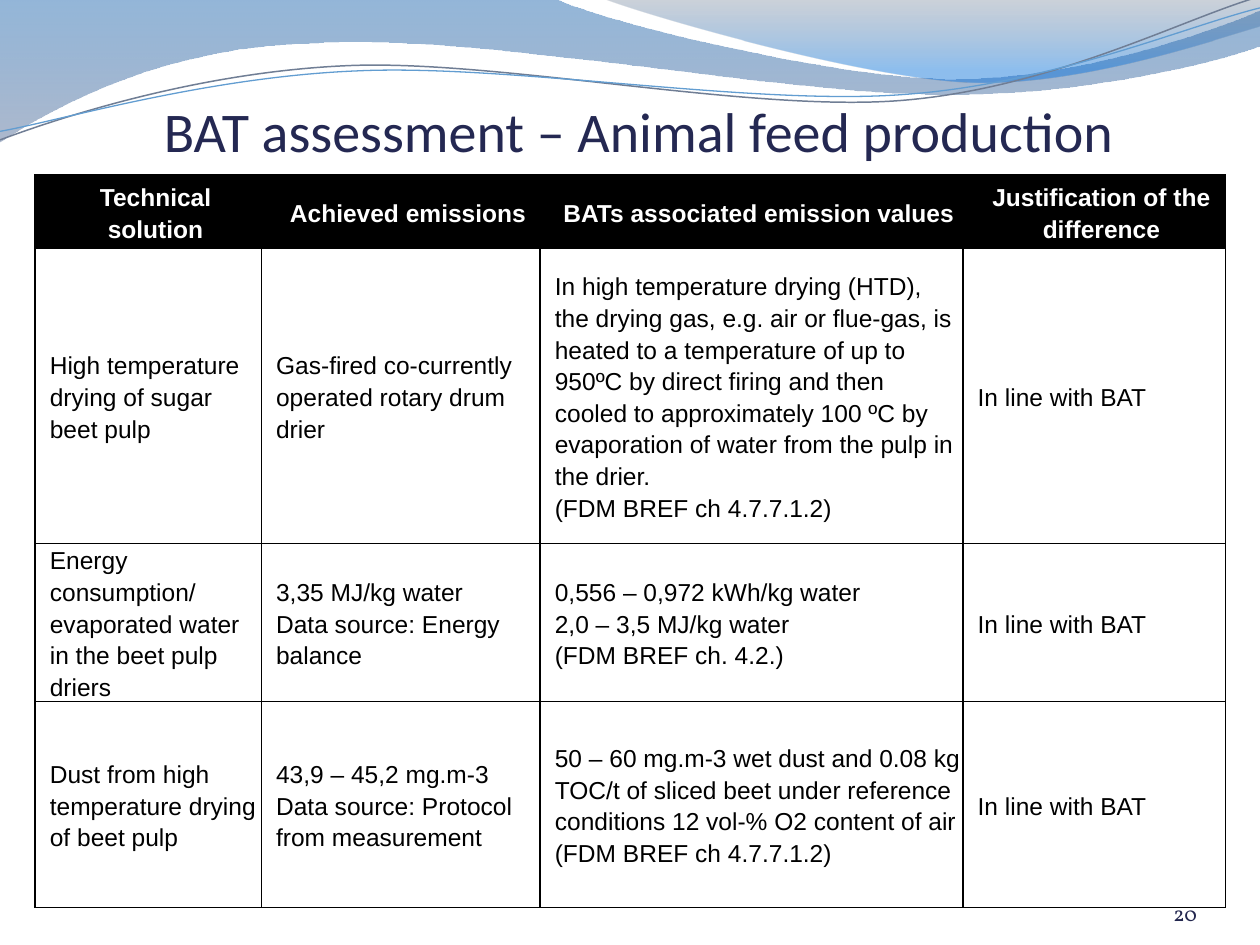
from lxml.etree import SubElement
from pptx import Presentation
from pptx.dml.color import RGBColor
from pptx.enum.text import MSO_ANCHOR as Anchor, MSO_AUTO_SIZE as AutoSize, PP_ALIGN as Align
from pptx.oxml.ns import qn
from pptx.util import Pt

COLORS = {
    "title": "242852", "number": "22264E", "black": "000000", "white": "FFFFFF",
    "deep": "125EAA", "haze": "697FA4", "slate": "596982", "sky": "0670DA",
    "grey line": "707E95", "blue line": "629DD1",
}
TITLE = "BAT assessment – Animal feed production"
PAGE_NUMBER = "20"
ROWS = [
    ["Technical solution", "Achieved emissions", "BATs associated emission values",
     "Justification of the difference"],
    ["High temperature drying of sugar beet pulp",
     "Gas-fired co-currently operated rotary drum drier",
     "In high temperature drying (HTD), the drying gas, e.g. air or flue-gas, is heated "
     "to a temperature of up to 950ºC by direct firing and then cooled to approximately "
     "100 ºC by evaporation of water from the pulp in the drier.\n(FDM BREF ch 4.7.7.1.2)",
     "In line with BAT"],
    ["Energy consumption/ evaporated water in the beet pulp driers",
     "3,35 MJ/kg water\nData source: Energy balance",
     "0,556 – 0,972 kWh/kg water\n2,0 – 3,5 MJ/kg water\n(FDM BREF ch. 4.2.)",
     "In line with BAT"],
    ["Dust from high temperature drying of beet pulp",
     "43,9 – 45,2 mg.m-3\nData source: Protocol from measurement",
     "50 – 60 mg.m-3 wet dust and 0.08 kg TOC/t of sliced beet under reference "
     "conditions 12 vol-% O2 content of air\n(FDM BREF ch 4.7.7.1.2)",
     "In line with BAT"],
]
COLUMN_WIDTHS = [129.3, 159.3, 241.6, 150]
ROW_HEIGHTS = [42, 168.5, 90, 117.5]

WAVES = [
    {"path": [[(0, 0)], [(317, -0.7)], [(343, 12), (478, 45), (546, 45)],
              [(614, 45), (690, 19), (720, 6)], [(721, 26)],
              [(708, 32), (626, 55), (537, 54)], [(447, 54), (275, 20), (185, 24.5)],
              [(93, 26), (33, 60), (-1, 81.5)]],
     "stops": [(0, "deep", 45), (1, "haze", 55)]},
    {"path": [[(345, -0.7)], [(366.5, 8), (491, 44.5), (553.5, 47)],
              [(616, 49.5), (692, 23), (720, 15)], [(720, 0)]],
     "stops": [(0, "slate", 30), (0.8, "sky", 45)]},
    {"path": [[(-1.4, 63)], [(33.7, 51.7), (114.3, 29.4), (199.9, 30)],
              [(284.9, 30.5), (425.9, 67.2), (512.6, 64.8)],
              [(599.3, 62.3), (676.6, 25.9), (720.1, 15.4)]],
     "line": ("grey line", 0.85)},
    {"path": [[(-1.1, 58.1)], [(33.1, 53.7), (118.2, 32.6), (204.3, 33.2)],
              [(290.4, 33.2), (429.1, 63.8), (515.3, 61.4)],
              [(601.5, 59.4), (678.4, 30), (721.4, 21.5)]],
     "line": ("blue line", 0.75)},
]
LINE_TILT = 357.3


def rgb(color):
    return RGBColor.from_string(COLORS[color])


def bend_segments(wave, path):
    steps = iter(list(wave.element.iter(qn("a:lnTo"))))
    for segment in path[1:]:
        corners = [next(steps) for _ in segment]
        if len(corners) == 3:
            curve = corners[0].makeelement(qn("a:cubicBezTo"))
            corners[0].addprevious(curve)
            for corner in corners:
                curve.append(corner[0])
                corner.getparent().remove(corner)


def add_wave(shapes, path, stops=None, line=None):
    start, *rest = [(Pt(x), Pt(y)) for segment in path for x, y in segment]
    builder = shapes.build_freeform(*start)
    builder.add_line_segments(rest, close=bool(stops))
    wave = builder.convert_to_shape()
    bend_segments(wave, path)
    wave.shadow.inherit = False
    if line:
        wave.rotation = LINE_TILT
        wave.fill.background()
        wave.line.color.rgb, wave.line.width = rgb(line[0]), Pt(line[1])
        return
    wave.line.fill.background()
    wave.fill.gradient()
    wave.fill.gradient_angle = 270
    for stop, (position, color, _) in zip(wave.fill.gradient_stops, stops):
        stop.position, stop.color.rgb = position, rgb(color)
    for color_node, (_, _, opacity) in zip(wave.element.iter(qn("a:srgbClr")), stops):
        SubElement(color_node, qn("a:alpha"), val=str(opacity * 1000))


def write_text(frame, text, font, size, color, bold=False, align=Align.LEFT,
               spacing=1.0, after=0):
    frame.text = text
    frame.word_wrap = True
    for paragraph in frame.paragraphs:
        paragraph.alignment, paragraph.line_spacing = align, spacing
        paragraph.space_after = Pt(after)
        for run in paragraph.runs:
            run.font.name, run.font.size, run.font.bold = font, Pt(size), bold
            run.font.color.rgb = rgb(color)


def set_box(target, left, top, right, bottom, anchor):
    target.margin_left, target.margin_top = Pt(left), Pt(top)
    target.margin_right, target.margin_bottom = Pt(right), Pt(bottom)
    target.vertical_anchor = anchor


def add_borders(cell):
    properties = cell._tc.get_or_add_tcPr()
    for side in "LRTB":
        border = SubElement(properties, qn(f"a:ln{side}"), w=str(Pt(1)))
        SubElement(SubElement(border, qn("a:solidFill")), qn("a:srgbClr"), val=COLORS["black"])


def add_emissions_table(shapes):
    table = shapes.add_table(len(ROWS), len(COLUMN_WIDTHS), Pt(20), Pt(100),
                             Pt(sum(COLUMN_WIDTHS)), Pt(sum(ROW_HEIGHTS))).table
    table.horz_banding = False
    for column, width in zip(table.columns, COLUMN_WIDTHS):
        column.width = Pt(width)
    for index, (row, height, texts) in enumerate(zip(table.rows, ROW_HEIGHTS, ROWS)):
        row.height = Pt(height)
        header = index == 0
        for cell, text in zip(row.cells, texts):
            set_box(cell, 8.5, 0, 0, 0, Anchor.MIDDLE)
            add_borders(cell)
            if header:
                cell.fill.solid()
                cell.fill.fore_color.rgb = rgb("black")
            else:
                cell.fill.background()
            write_text(cell.text_frame, text, font="Arial", size=14, bold=header, spacing=1.15,
                       color="white" if header else "black",
                       align=Align.CENTER if header else Align.LEFT,
                       after=0 if header or "\n" in text else 10)


def main():
    deck = Presentation()
    deck.slide_width, deck.slide_height = Pt(720), Pt(540)
    slide = deck.slides.add_slide(deck.slide_layouts[5])
    shapes = slide.shapes
    for wave in WAVES:
        add_wave(shapes, **wave)

    title = shapes.title
    title.left, title.top, title.width, title.height = Pt(93.6), Pt(26.2), Pt(601), Pt(67.5)
    set_box(title.text_frame, 0, 3.6, 0, 0, Anchor.BOTTOM)
    write_text(title.text_frame, TITLE, font="Calibri", size=32, color="title")
    title.text_frame.auto_size = AutoSize.NONE
    shapes.element.append(title.element)

    add_emissions_table(shapes)

    number = shapes.add_textbox(Pt(624), Pt(500.4), Pt(60), Pt(28.8)).text_frame
    set_box(number, 0, 0, 0, 0, Anchor.BOTTOM)
    write_text(number, PAGE_NUMBER, font="Vollkorn", size=12, color="number", align=Align.RIGHT)
    deck.save("out.pptx")


if __name__ == "__main__":
    main()
